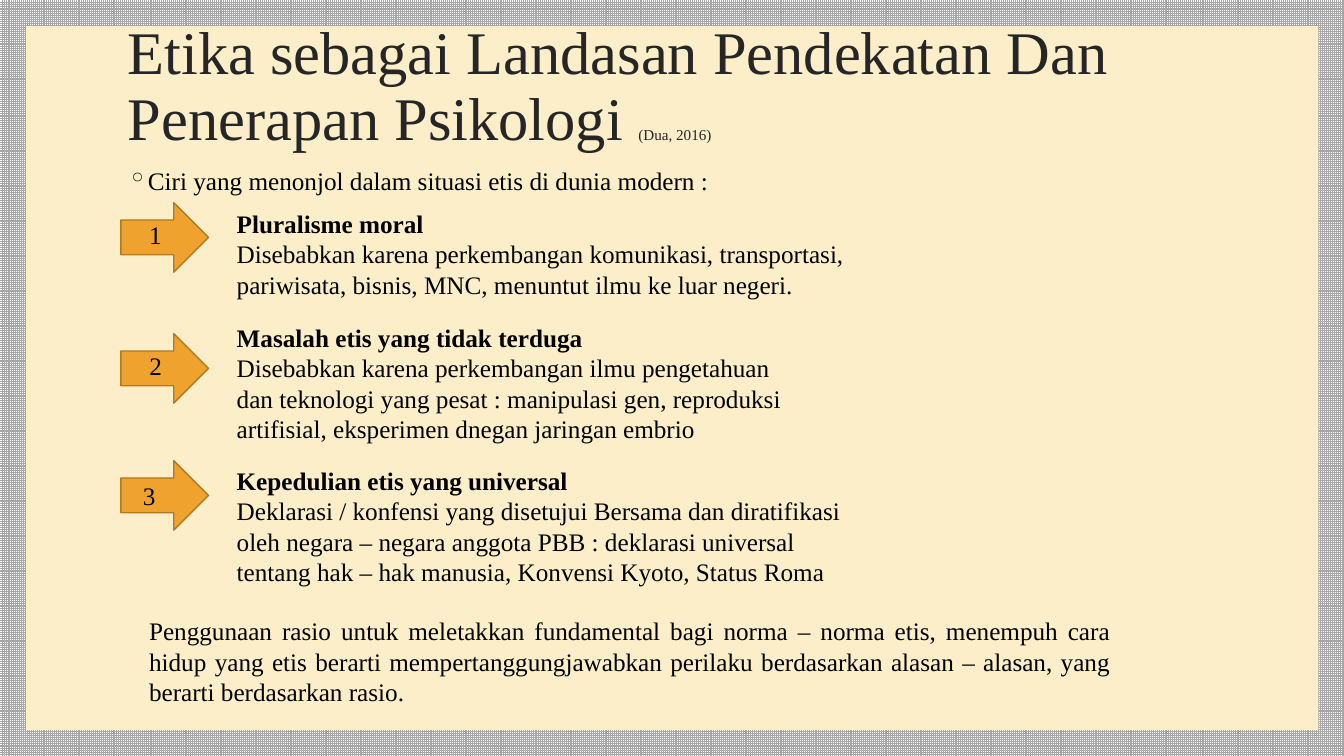
from lxml import etree
from pptx import Presentation
from pptx import util as u
from pptx.dml import color as dml
from pptx.enum import dml as patterns
from pptx.enum import shapes, text
from pptx.oxml import ns

COLORS = {
    "grid": "A6A6A6", "white": "FFFFFF", "panel": "FBEEC9", "title": "262626",
    "body": "000000", "arrow": "F0A22E", "outline": "B27822",
}
FONT = "Times New Roman"
LEFT, CENTER, JUSTIFY = text.PP_ALIGN.LEFT, text.PP_ALIGN.CENTER, text.PP_ALIGN.JUSTIFY
TITLE = [("Etika sebagai Landasan Pendekatan Dan Penerapan Psikologi ", {"size": u.Pt(43.2)}),
         ("(Dua, 2016)", {"size": u.Pt(10.8)})]
INTRO = "Ciri yang menonjol dalam situasi etis di dunia modern :"
POINTS = [
    {"heading": "Pluralisme moral",
     "detail": "Disebabkan karena perkembangan komunikasi, transportasi, pariwisata, bisnis, MNC, "
               "menuntut ilmu ke luar negeri.",
     "arrow_top": 144.7, "number_box": (99.4, 153.4, 29.5, 29), "align": LEFT,
     "text_box": (162, 145.4, 448.6, 72.7)},
    {"heading": "Masalah etis yang tidak terduga",
     "detail": "Disebabkan karena perkembangan ilmu pengetahuan dan teknologi yang pesat : "
               "manipulasi gen, reproduksi artifisial, eksperimen dnegan jaringan embrio",
     "arrow_top": 238.3, "number_box": (84.2, 247, 54, 29), "align": CENTER,
     "text_box": (162, 226.8, 404.6, 94.3)},
    {"heading": "Kepedulian etis yang universal",
     "detail": "Deklarasi / konfensi yang disetujui Bersama dan diratifikasi oleh negara – negara "
               "anggota PBB : deklarasi universal tentang hak – hak manusia, Konvensi Kyoto, Status Roma",
     "arrow_top": 329, "number_box": (84.2, 339.8, 44.6, 29), "align": CENTER,
     "text_box": (162, 329, 448.6, 94.3)},
]
CONCLUSION = ("Penggunaan rasio untuk meletakkan fundamental bagi norma – norma etis, menempuh cara "
              "hidup yang etis berarti mempertanggungjawabkan perilaku berdasarkan alasan – alasan, "
              "yang berarti berdasarkan rasio.")


def rgb(name):
    return dml.RGBColor.from_string(COLORS[name])


def points(box):
    return [u.Pt(value) for value in box]


def apply(target, values):
    for name, value in values.items():
        setattr(target, name, value)


def add_shape(slide, kind, box, fill, outline=None):
    shape = slide.shapes.add_shape(kind, *points(box))
    shape.shadow.inherit = False
    shape.fill.solid()
    shape.fill.fore_color.rgb = rgb(fill)
    if outline:
        shape.line.color.rgb = rgb(outline)
        shape.line.width = u.Pt(1)
    else:
        shape.line.fill.background()


def add_text(slide, box, paragraphs, color="body", frame_format=None, paragraph_format=None):
    frame = slide.shapes.add_textbox(*points(box)).text_frame
    apply(frame, {"word_wrap": True, "auto_size": text.MSO_AUTO_SIZE.SHAPE_TO_FIT_TEXT,
                  **(frame_format or {})})
    for index, runs in enumerate(paragraphs):
        paragraph = frame.add_paragraph() if index else frame.paragraphs[0]
        apply(paragraph, paragraph_format or {})
        for words, font_format in runs:
            run = paragraph.add_run()
            run.text = words
            apply(run.font, {"name": FONT, "size": u.Pt(18), **font_format})
            run.font.color.rgb = rgb(color)
    return frame


def add_bullet(paragraph, mark, color, indent):
    properties = paragraph._p.get_or_add_pPr()
    properties.set("marL", str(u.Pt(indent)))
    properties.set("indent", str(-u.Pt(indent)))
    bullet_color = etree.SubElement(properties, ns.qn("a:buClr"))
    etree.SubElement(bullet_color, ns.qn("a:srgbClr"), val=COLORS[color])
    etree.SubElement(properties, ns.qn("a:buChar"), char=mark)


def main():
    presentation = Presentation()
    apply(presentation, {"slide_width": u.Pt(960), "slide_height": u.Pt(540)})
    slide = presentation.slides.add_slide(presentation.slide_layouts[6])

    background = slide.background.fill
    background.patterned()
    background.pattern = patterns.MSO_PATTERN.SMALL_GRID
    background.fore_color.rgb = rgb("grid")
    background.back_color.rgb = rgb("white")
    add_shape(slide, shapes.MSO_SHAPE.RECTANGLE, (18.7, 18.7, 923, 502.6), "panel")

    fixed = {"auto_size": text.MSO_AUTO_SIZE.NONE}
    add_text(slide, (84.2, 31, 792, 63.4), [TITLE], "title",
             {**fixed, "vertical_anchor": text.MSO_ANCHOR.MIDDLE}, {"line_spacing": 0.9})
    intro = add_text(slide, (84.2, 114.5, 792, 406), [[(INTRO, {})]], frame_format=fixed,
                     paragraph_format={"space_before": u.Pt(9)})
    add_bullet(intro.paragraphs[0], "◦", "title", 14.4)

    for number, point in enumerate(POINTS, 1):
        add_shape(slide, shapes.MSO_SHAPE.RIGHT_ARROW, (86.4, point["arrow_top"], 62.6, 49.7),
                  "arrow", "outline")
        add_text(slide, point["number_box"], [[(str(number), {})]],
                 paragraph_format={"alignment": point["align"]})
        add_text(slide, point["text_box"],
                 [[(point["heading"], {"bold": True})], [(point["detail"], {})]])

    add_text(slide, (99.4, 436.3, 701.3, 72.7), [[(CONCLUSION, {})]],
             paragraph_format={"alignment": JUSTIFY})
    presentation.save("out.pptx")


if __name__ == "__main__":
    main()
